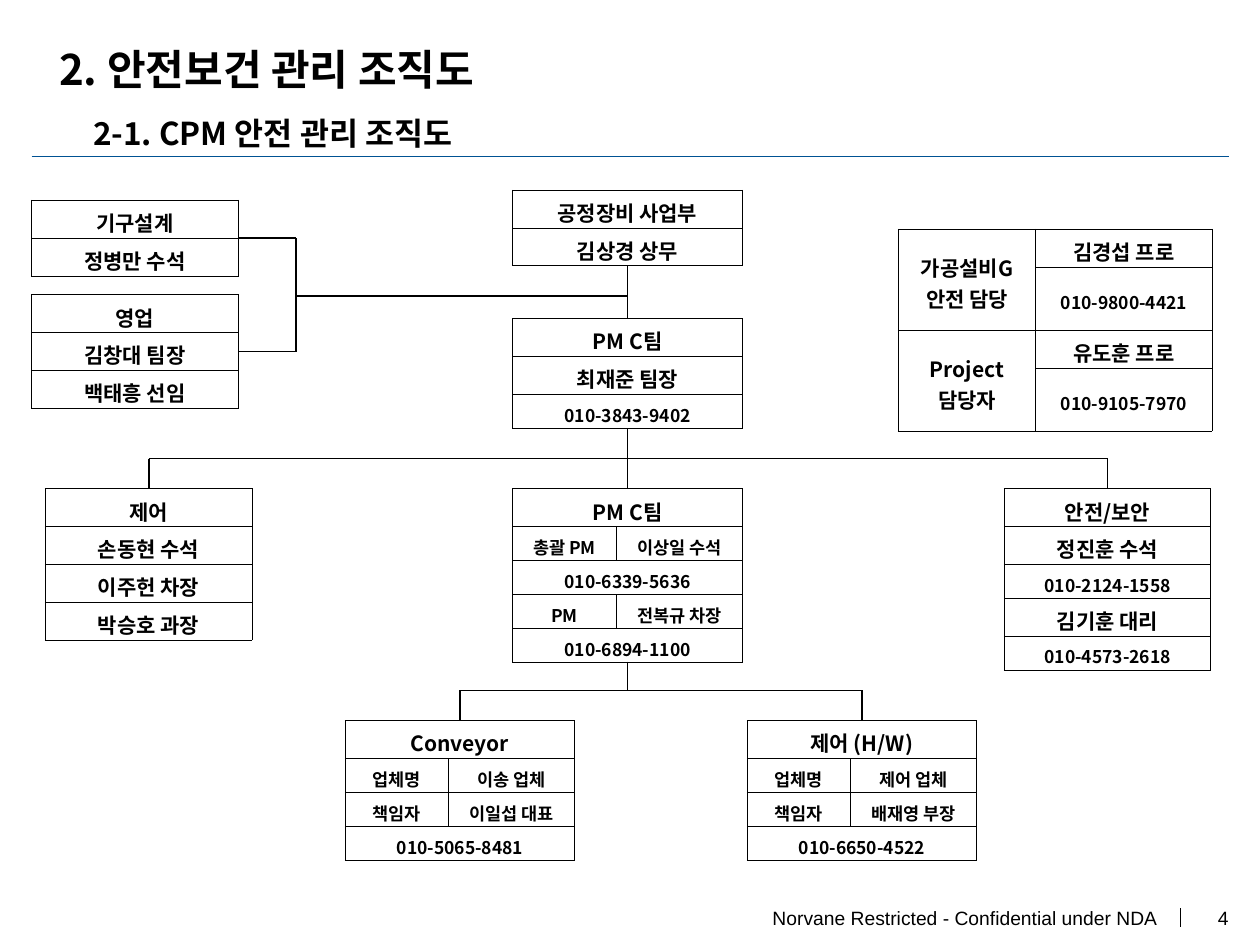
from dataclasses import dataclass
from itertools import pairwise
from typing import Optional

from lxml import etree
from pptx import Presentation
from pptx.dml.color import RGBColor
from pptx.enum.shapes import MSO_CONNECTOR
from pptx.enum.text import MSO_ANCHOR, PP_ALIGN
from pptx.oxml.ns import qn
from pptx.util import Inches, Pt

STRAIGHT = MSO_CONNECTOR.STRAIGHT
MIDDLE = MSO_ANCHOR.MIDDLE
LEFT, CENTER, RIGHT = PP_ALIGN.LEFT, PP_ALIGN.CENTER, PP_ALIGN.RIGHT

COLORS = {"ink": "000000", "rule": "005293"}
KOREAN = "Noto Sans CJK KR"
LATIN = "Arial"
LARGE, SMALL = 12, 10
ROW_HEIGHTS = {LARGE: 0.3, SMALL: 0.27}
SINGLE = (1.64,)
WIDE = (1.82,)
PAIR = (0.82, 1.0)


@dataclass(frozen=True)
class Row:
    texts: tuple[Optional[str], ...]
    size: int = LARGE
    height: Optional[float] = None


@dataclass(frozen=True)
class Team:
    left: float
    top: float
    columns: tuple[float, ...]
    rows: tuple[Row, ...]


def large(*texts: Optional[str]) -> Row:
    return Row(texts)


def small(*texts: Optional[str]) -> Row:
    return Row(texts, SMALL)


def phone(number: str) -> Row:
    return Row((None, number), SMALL, 0.5)


def vendor(left: float, role: str, company: str, manager: str, number: str) -> Team:
    rows = (large(role), small("업체명", company), small("책임자", manager), small(number))
    return Team(left, 5.72, PAIR, rows)


TEAMS = (
    Team(4.07, 2.53, WIDE, (large("PM C팀"), large("최재준 팀장"), small("010-3843-9402"))),
    Team(4.07, 1.51, WIDE, (large("공정장비 사업부"), large("김상경 상무"))),
    Team(0.36, 3.88, SINGLE, (
        large("제어"), large("손동현 수석"), large("이주헌 차장"), large("박승호 과장"))),
    Team(7.13, 1.82, (1.09, 1.4), (
        large("가공설비G\n안전 담당", "김경섭 프로"), phone("010-9800-4421"),
        large("Project\n담당자", "유도훈 프로"), phone("010-9105-7970"))),
    Team(4.07, 3.88, PAIR, (
        large("PM C팀"),
        small("총괄 PM", "이상일 수석"), small("010-6339-5636"),
        small("PM", "전복규 차장"), small("010-6894-1100"))),
    Team(7.97, 3.88, SINGLE, (
        large("안전/보안"),
        large("정진훈 수석"), small("010-2124-1558"),
        large("김기훈 대리"), small("010-4573-2618"))),
    vendor(5.93, "제어 (H/W)", "제어 업체", "배재영 부장", "010-6650-4522"),
    vendor(2.74, "Conveyor", "이송 업체", "이일섭 대표", "010-5065-8481"),
    Team(0.25, 1.59, SINGLE, (large("기구설계"), large("정병만 수석"))),
    Team(0.25, 2.34, SINGLE, (large("영업"), large("김창대 팀장"), large("백태흥 선임"))),
)

AXIS = 4.98
LINKS = (
    ((AXIS, 2.11), (AXIS, 2.53)),
    ((AXIS, 3.4), (AXIS, 3.88)),
    ((1.18, 3.88), (1.18, 3.64), (8.79, 3.64), (8.79, 3.88)),
    ((AXIS, 5.25), (AXIS, 5.48)),
    ((3.65, 5.72), (3.65, 5.48), (6.84, 5.48), (6.84, 5.72)),
    ((1.89, 1.89), (2.35, 1.89), (2.35, 2.79), (1.89, 2.79)),
    ((2.35, 2.35), (AXIS, 2.35)),
)


def format_text(frame, size: int, align, font: str = KOREAN, bold: bool = True) -> None:
    for para in frame.paragraphs:
        para.alignment = align
        for span in para.runs:
            span.font.size = Pt(size)
            span.font.bold = bold
            span.font.color.rgb = RGBColor.from_string(COLORS["ink"])
            span.font.name = font
            east_asian = etree.SubElement(span.font._element, qn("a:ea"))
            east_asian.set("typeface", font)


def add_line(page, start, end, color: str = "ink", width: float = 1) -> None:
    line = page.shapes.add_connector(STRAIGHT, *map(Inches, (*start, *end)))
    line.line.color.rgb = RGBColor.from_string(COLORS[color])
    line.line.width = Pt(width)
    etree.SubElement(line._element.spPr, qn("a:effectLst"))


def add_label(page, text: str, place, size: int, align, font: str, bold: bool):
    box = page.shapes.add_textbox(*map(Inches, place))
    frame = box.text_frame
    frame.word_wrap = True
    frame.text = text
    format_text(frame, size, align, font, bold)
    return frame


def add_footer(page, text: str, place) -> None:
    frame = add_label(page, text, place, 11, RIGHT, LATIN, False)
    frame.vertical_anchor = MIDDLE
    frame.margin_left = frame.margin_right = 0


def add_borders(cell) -> None:
    properties = cell._tc.get_or_add_tcPr()
    for side in ("lnL", "lnR", "lnT", "lnB"):
        border = etree.SubElement(properties, qn(f"a:{side}"), w=str(Pt(0.5)))
        fill = etree.SubElement(border, qn("a:solidFill"))
        etree.SubElement(fill, qn("a:srgbClr"), val=COLORS["ink"])


def add_team(page, team: Team) -> None:
    heights = [row.height or ROW_HEIGHTS[row.size] for row in team.rows]
    place = (team.left, team.top, sum(team.columns), sum(heights))
    table = page.shapes.add_table(
        len(heights), len(team.columns), *map(Inches, place)).table
    table.first_row = table.horz_banding = False
    for column, width in zip(table.columns, team.columns):
        column.width = Inches(width)
    for index, row in enumerate(team.rows):
        table.rows[index].height = Inches(heights[index])
        for position in range(len(team.columns)):
            cell = table.cell(index, position)
            add_borders(cell)
            cell.fill.background()
            cell.vertical_anchor = MIDDLE
            cell.margin_left = cell.margin_right = Inches(0.05)
            cell.margin_top = Inches(0.05)
            cell.margin_bottom = 0
        for position, text in enumerate(row.texts):
            cell = table.cell(index, position)
            if text is None:
                table.cell(index - 1, position).merge(cell)
            else:
                cell.text_frame.text = text
                format_text(cell.text_frame, row.size, CENTER)
        if len(row.texts) < len(team.columns):
            table.cell(index, 0).merge(table.cell(index, len(team.columns) - 1))


def add_headings(page) -> None:
    title = page.shapes.title
    title.left, title.top, title.width, title.height = map(
        Inches, (0.37, 0.29, 5.54, 0.51))
    title.text_frame.text = "2. 안전보건 관리 조직도"
    title.text_frame.vertical_anchor = MIDDLE
    format_text(title.text_frame, 24, LEFT)
    subtitle = add_label(page, "2-1. CPM 안전 관리 조직도", (0.64, 0.8, 4.35, 0.46),
                         18, LEFT, KOREAN, True)
    subtitle.paragraphs[0].line_spacing = 1.2


def main() -> None:
    deck = Presentation()
    deck.slide_width, deck.slide_height = Inches(10), Inches(7.5)
    page = deck.slides.add_slide(deck.slide_layouts.get_by_name("Title Only"))
    add_line(page, (0.25, 1.24), (9.75, 1.24), "rule", 0.75)
    add_line(page, (9.37, 7.21), (9.37, 7.36))
    add_footer(page, "4", (9.24, 7.14, 0.51, 0.29))
    add_footer(page, "Norvane Restricted - Confidential under NDA", (5.69, 7.14, 3.5, 0.29))
    add_headings(page)
    for points in LINKS:
        for start, end in pairwise(points):
            add_line(page, start, end)
    for team in TEAMS:
        add_team(page, team)
    deck.save("out.pptx")


if __name__ == "__main__":
    main()
